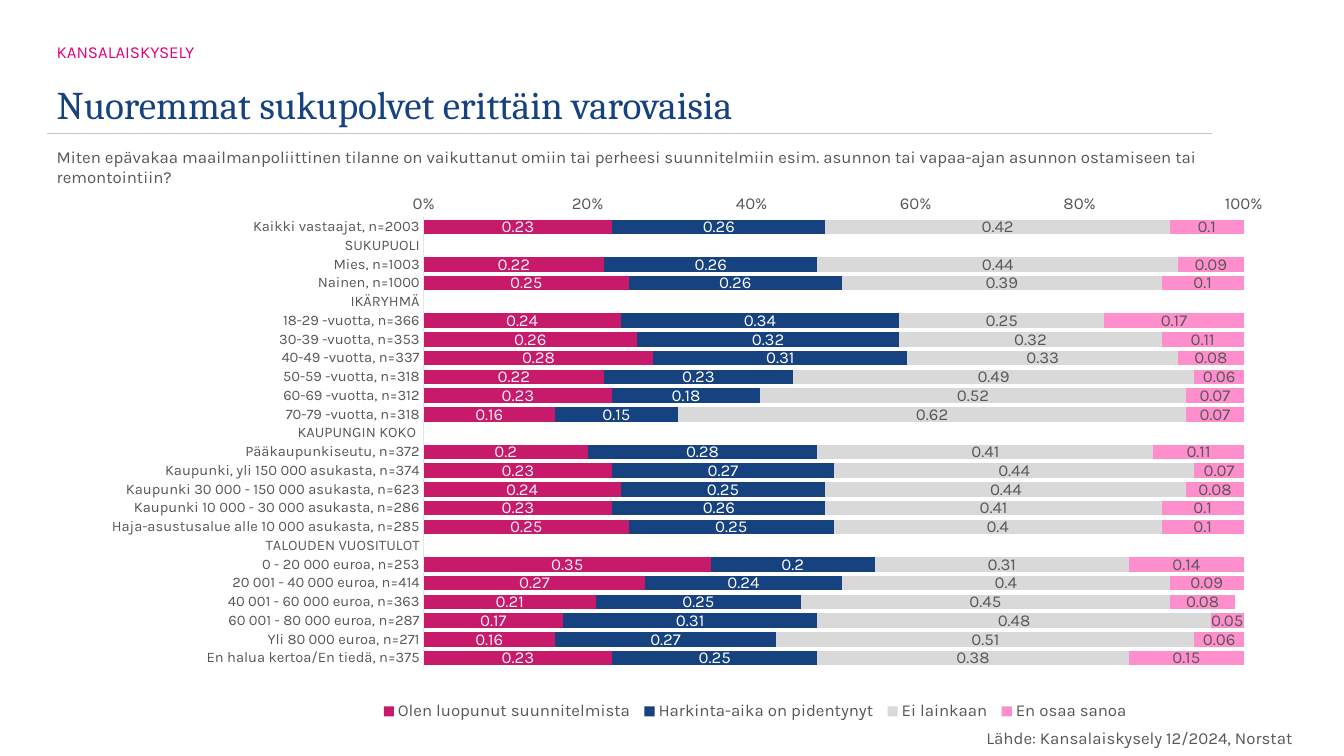
from lxml.etree import SubElement
from pptx import Presentation
from pptx.chart.data import CategoryChartData
from pptx.dml.color import RGBColor
from pptx.enum.chart import XL_CHART_TYPE, XL_LABEL_POSITION, XL_LEGEND_POSITION, XL_TICK_MARK
from pptx.enum.shapes import MSO_CONNECTOR
from pptx.enum.text import MSO_ANCHOR
from pptx.oxml import parse_xml
from pptx.oxml.ns import nsdecls, qn
from pptx.util import Cm, Pt

COLORS = {
    "heading": "164280", "kicker": "E5007D", "body": "575757", "rule": "C6C6C5", "axis": "E6E6E6",
    "cancelled": "C71A6B", "delayed": "164280", "unaffected": "D9D9D9", "unsure": "FF8FCC",
    "pale": "F2F2F2", "white": "FFFFFF",
}


def color(name):
    return RGBColor.from_string(COLORS[name])


def set_font(font, size, color_name, face="Karla"):
    values = {"size": Pt(size), "name": face, "bold": False}
    for attribute, value in values.items():
        setattr(font, attribute, value)
    font.color.rgb = color(color_name)


presentation = Presentation()
presentation.slide_width = Cm(33.87)
presentation.slide_height = Cm(19.05)
slide = presentation.slides.add_slide(presentation.slide_layouts[6])

rule = slide.shapes.add_connector(MSO_CONNECTOR.STRAIGHT, Cm(1.18), Cm(3.36), Cm(30.55), Cm(3.36))
rule.line.color.rgb = color("rule")
rule.line.width = Pt(1)
SubElement(rule._element.spPr, qn("a:effectLst"))

texts = [
    ("Nuoremmat sukupolvet erittäin varovaisia", (1.18, 0.86, 29.36, 2.49),
     (28, "heading", "Cambria"), {"line_spacing": 0.9}, {"vertical_anchor": MSO_ANCHOR.BOTTOM}),
    ("KANSALAISKYSELY", (1.18, 0.82, 29.36, 0.56), (12, "kicker"), {"line_spacing": 1.2}, {}),
    ("Miten epävakaa maailmanpoliittinen tilanne on vaikuttanut omiin tai perheesi suunnitelmiin esim. "
     "asunnon tai vapaa-ajan asunnon ostamiseen tai remontointiin?",
     (1.18, 3.57, 31.29, 1.27), (12, "body"), {}, {}),
    ("Lähde: Kansalaiskysely 12/2024, Norstat", (24.61, 18.21, 9, 0.76), (12, "body"), {}, {}),
]
for text, place, font_values, paragraph_values, frame_values in texts:
    shape = slide.shapes.add_textbox(*map(Cm, place))
    frame = shape.text_frame
    for attribute, value in {"word_wrap": True, **frame_values}.items():
        setattr(frame, attribute, value)
    paragraph = frame.paragraphs[0]
    paragraph.text = text
    for attribute, value in paragraph_values.items():
        setattr(paragraph, attribute, value)
    set_font(paragraph.runs[0].font, *font_values)

answers = [
    ("Kaikki vastaajat, n=2003", 0.23, 0.26, 0.42, 0.1),
    ("SUKUPUOLI", None, None, None, None),
    ("Mies, n=1003", 0.22, 0.26, 0.44, 0.09),
    ("Nainen, n=1000", 0.25, 0.26, 0.39, 0.1),
    ("IKÄRYHMÄ", None, None, None, None),
    ("18-29 -vuotta, n=366", 0.24, 0.34, 0.25, 0.17),
    ("30-39 -vuotta, n=353", 0.26, 0.32, 0.32, 0.11),
    ("40-49 -vuotta, n=337", 0.28, 0.31, 0.33, 0.08),
    ("50-59 -vuotta, n=318", 0.22, 0.23, 0.49, 0.06),
    ("60-69 -vuotta, n=312", 0.23, 0.18, 0.52, 0.07),
    ("70-79 -vuotta, n=318", 0.16, 0.15, 0.62, 0.07),
    ("KAUPUNGIN KOKO ", None, None, None, None),
    ("Pääkaupunkiseutu, n=372", 0.2, 0.28, 0.41, 0.11),
    ("Kaupunki, yli 150 000 asukasta, n=374", 0.23, 0.27, 0.44, 0.07),
    ("Kaupunki 30 000 - 150 000 asukasta, n=623", 0.24, 0.25, 0.44, 0.08),
    ("Kaupunki 10 000 - 30 000 asukasta, n=286", 0.23, 0.26, 0.41, 0.1),
    ("Haja-asustusalue alle 10 000 asukasta, n=285", 0.25, 0.25, 0.4, 0.1),
    ("TALOUDEN VUOSITULOT", None, None, None, None),
    ("0 - 20 000 euroa, n=253", 0.35, 0.2, 0.31, 0.14),
    ("20 001 - 40 000 euroa, n=414", 0.27, 0.24, 0.4, 0.09),
    ("40 001 - 60 000 euroa, n=363", 0.21, 0.25, 0.45, 0.08),
    ("60 001 - 80 000 euroa, n=287", 0.17, 0.31, 0.48, 0.05),
    ("Yli 80 000 euroa, n=271", 0.16, 0.27, 0.51, 0.06),
    ("En halua kertoa/En tiedä, n=375", 0.23, 0.25, 0.38, 0.15),
]
series_styles = [
    ("Olen luopunut suunnitelmista", "cancelled", "pale"),
    ("Harkinta-aika on pidentynyt", "delayed", "white"),
    ("Ei lainkaan", "unaffected", "body"),
    ("En osaa sanoa", "unsure", "body"),
]
categories, *columns = zip(*answers)
chart_data = CategoryChartData()
chart_data.categories = categories
for (name, _, _), values in zip(series_styles, columns):
    chart_data.add_series(name, values)

chart = slide.shapes.add_chart(
    XL_CHART_TYPE.BAR_STACKED, Cm(1.42), Cm(4.88), Cm(30.66), Cm(13.87), chart_data
).chart
set_font(chart.font, 12, "body")
chart.has_title = False
chart.has_legend = True
chart.legend.position = XL_LEGEND_POSITION.BOTTOM
chart.legend.include_in_layout = False
set_font(chart.legend.font, 12, "body")

plot = chart.plots[0]
for attribute, value in {"gap_width": 30, "overlap": 100, "vary_by_categories": False}.items():
    setattr(plot, attribute, value)
for series, (_, fill_name, label_name) in zip(plot.series, series_styles):
    series.format.fill.solid()
    series.format.fill.fore_color.rgb = color(fill_name)
    labels = series.data_labels
    labels.show_value = True
    labels.position = XL_LABEL_POSITION.CENTER
    set_font(labels.font, 12, label_name)

axis_values = {"major_tick_mark": XL_TICK_MARK.NONE, "minor_tick_mark": XL_TICK_MARK.NONE,
               "has_major_gridlines": False}
category_values = {"reverse_order": True, "crosses_at": len(answers) + 1}
scale_values = {"minimum_scale": 0, "maximum_scale": 1, "major_unit": 0.2}
for axis, size, extra_values in [
    (chart.category_axis, 10.5, category_values),
    (chart.value_axis, 12, scale_values),
]:
    for attribute, value in {**axis_values, **extra_values}.items():
        setattr(axis, attribute, value)
    set_font(axis.tick_labels.font, size, "body")
chart.category_axis.format.line.color.rgb = color("axis")
chart.category_axis.format.line.width = Pt(0.75)
chart.value_axis.format.line.fill.background()
chart.value_axis.tick_labels.number_format = "0%"
chart.value_axis.tick_labels.number_format_is_linked = False

edges = {"xMode": "edge", "yMode": "edge"}
plot_layout = {"layoutTarget": "inner", **edges, "x": 0.302, "y": 0.036, "w": 0.674, "h": 0.824}
legend_layout = {**edges, "x": 0.262, "y": 0.915, "w": 0.625, "h": 0.05}
for element, position, layout_values in [
    (chart._chartSpace.chart.plotArea, 0, plot_layout),
    (chart.legend._element, 1, legend_layout),
]:
    for layout in element.findall(qn("c:layout")):
        element.remove(layout)
    layout_items = "".join(f'<c:{tag} val="{value}"/>' for tag, value in layout_values.items())
    element.insert(position, parse_xml(
        f'<c:layout {nsdecls("c")}><c:manualLayout>{layout_items}</c:manualLayout></c:layout>'
    ))

presentation.save("out.pptx")
